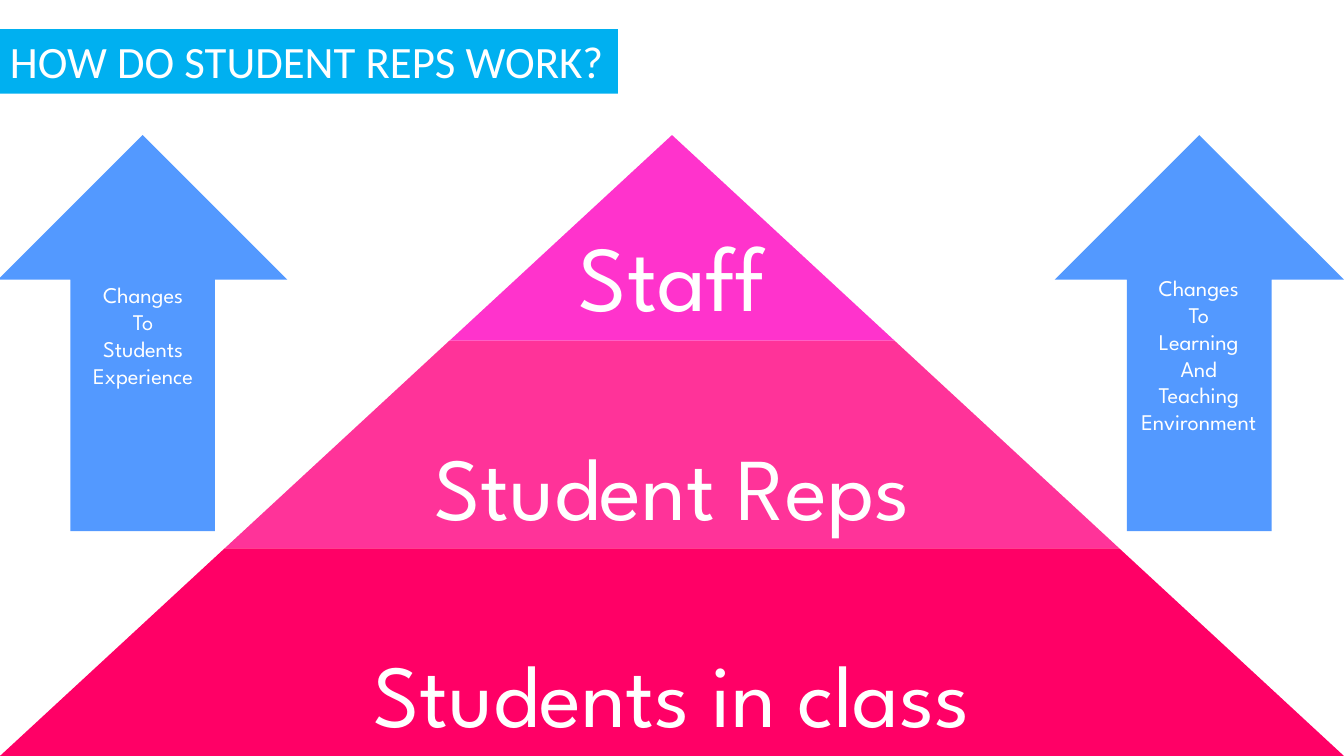
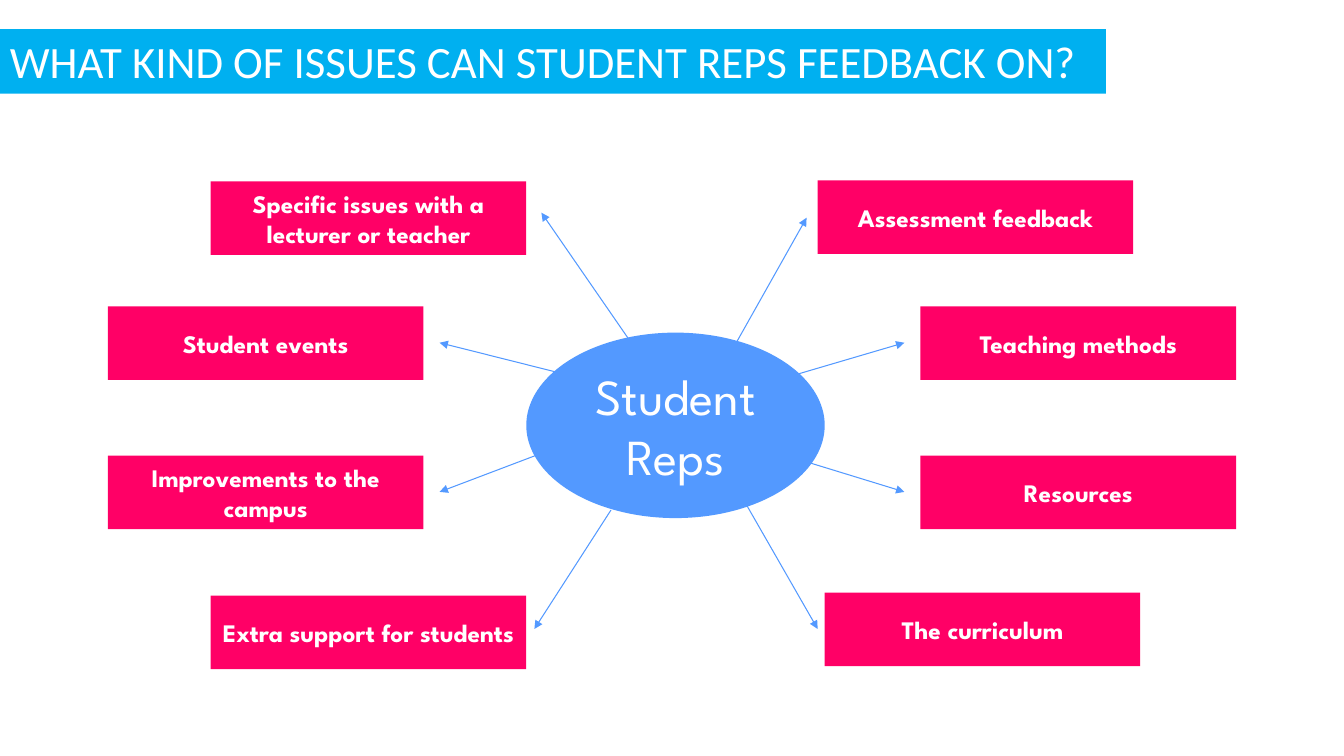
"""Build two slides on how student reps work and what they feed back on."""
from lxml.etree import SubElement
from pptx import Presentation
from pptx.dml.color import RGBColor
from pptx.enum.shapes import MSO_CONNECTOR, MSO_SHAPE
from pptx.enum.text import MSO_ANCHOR, PP_ALIGN
from pptx.oxml.ns import qn
from pptx.util import Inches, Pt

WHITE = RGBColor(0xFF, 0xFF, 0xFF)
BLUE = RGBColor(0x53, 0x99, 0xFF)
CYAN = RGBColor(0x00, 0xB0, 0xF0)
MAGENTA = RGBColor(0xFF, 0x33, 0xCC)
PINK = RGBColor(0xFF, 0x33, 0x99)
RED = RGBColor(0xFF, 0x00, 0x66)

WIDTH, HEIGHT = 13.33, 7.5
BODY_FONT, TITLE_FONT = "League Spartan", "Calibri"
PEAK = 1.34
SLOPE = WIDTH / 2 / (HEIGHT - PEAK)
BOX_W, BOX_H = 3.13, 0.73

TIERS = [
    ("Staff", 3.38, MAGENTA, 66, 1),
    ("Student Reps", 5.44, PINK, 63, 0.65),
    ("Students in class", HEIGHT, RED, 63, 0.65),
]
ARROWS = [
    (-0.02, 0.64, 2.74, 1.45, ["Changes", "To", "Students", "Experience"]),
    (10.46, 11.11, 2.67, 1.99,
     ["Changes", "To", "Learning", "And", "Teaching Environment"]),
]
TOPICS = [
    ("Assessment feedback", 8.11, 1.79, (7.19, 3.6), (8, 2.16)),
    ("Teaching methods", 9.13, 3.04, (7.61, 3.8), (8.97, 3.4)),
    ("Resources", 9.13, 4.52, (7.83, 4.53), (8.97, 4.88)),
    ("The curriculum", 8.18, 5.88, (7.33, 4.88), (8.11, 6.24)),
    ("Extra support for students", 2.09, 5.91, (6.06, 5.06), (5.3, 6.24)),
    ("Improvements to the campus", 1.07, 4.52, (5.6, 4.41), (4.36, 4.88)),
    ("Student events", 1.07, 3.04, (5.71, 3.74), (4.36, 3.4)),
    ("Specific issues with a lecturer or teacher", 2.09, 1.8,
     (6.35, 3.53), (5.37, 2.11)),
]


def write(sp, lines, size, font=BODY_FONT, color=WHITE, bold=False,
          align=PP_ALIGN.CENTER, anchor=MSO_ANCHOR.MIDDLE, spacing=None,
          margin=None):
    """Write one paragraph per line into a shape."""
    tf = sp.text_frame
    tf.word_wrap = True
    tf.vertical_anchor = anchor
    if margin is not None:
        tf.margin_left = tf.margin_right = Inches(margin)
        tf.margin_top = tf.margin_bottom = Inches(margin)
    for i, line in enumerate(lines):
        p = tf.add_paragraph() if i else tf.paragraphs[0]
        p.alignment = align
        if spacing:
            p.line_spacing = spacing
        r = p.add_run()
        r.text = line
        r.font.name = font
        r.font.size = Pt(size)
        r.font.bold = bold
        r.font.color.rgb = color


def add_block(shapes, kind, x, y, w, h, fill):
    """Add a flat filled shape without outline."""
    sp = shapes.add_shape(kind, Inches(x), Inches(y), Inches(w), Inches(h))
    sp.shadow.inherit = False
    sp.fill.solid()
    sp.fill.fore_color.rgb = fill
    sp.line.fill.background()
    return sp


def add_label(shapes, x, y, w, h, lines, size, **fmt):
    """Add a text box."""
    sp = shapes.add_textbox(Inches(x), Inches(y), Inches(w), Inches(h))
    write(sp, lines, size, **fmt)


def add_arrow(shapes, start, end):
    """Add a thin line with an arrowhead at its end."""
    line = shapes.add_connector(MSO_CONNECTOR.STRAIGHT,
                                *(Inches(v) for v in (*start, *end)))
    line.line.color.rgb = BLUE
    line.line.width = Pt(0.75)
    SubElement(line.line._get_or_add_ln(), qn("a:tailEnd"), type="triangle")
    SubElement(line._element.spPr, qn("a:effectLst"))


def add_slide(prs, title, title_w):
    """Add a blank slide with the title band."""
    s = prs.slides.add_slide(prs.slide_layouts[6])
    band = add_block(s.shapes, MSO_SHAPE.RECTANGLE, 0, 0.29, title_w, 0.64, CYAN)
    write(band, [title], 32, font=TITLE_FONT, align=PP_ALIGN.LEFT,
          anchor=MSO_ANCHOR.TOP)
    return s


def add_pyramid(shapes):
    """Stack the tiers from the peak down to the slide's bottom edge."""
    top = PEAK
    for name, bottom, fill, size, text_share in TIERS:
        w, h = 2 * SLOPE * (bottom - PEAK), bottom - top
        sp = add_block(shapes, MSO_SHAPE.TRAPEZOID, (WIDTH - w) / 2, top, w, h, fill)
        sp.adjustments[0] = SLOPE
        text_w = w * text_share
        add_label(shapes, (WIDTH - text_w) / 2, top, text_w, h, [name], size,
                  anchor=MSO_ANCHOR.BOTTOM, spacing=0.9, margin=0.09)
        top = bottom


def build_structure(prs):
    """Build the pyramid slide."""
    s = add_slide(prs, "HOW DO STUDENT REPS WORK?", 6.13)
    add_pyramid(s.shapes.add_group_shape().shapes)
    for x, text_x, text_y, text_h, lines in ARROWS:
        add_block(s.shapes, MSO_SHAPE.UP_ARROW, x, PEAK, 2.87, 3.93, BLUE)
        add_label(s.shapes, text_x, text_y, 1.56, text_h, lines, 16,
                  anchor=MSO_ANCHOR.TOP)


def build_issues(prs):
    """Build the slide with the issues around the hub."""
    s = add_slide(prs, "WHAT KIND OF ISSUES CAN STUDENT REPS FEEDBACK ON?", 10.97)
    hub = add_block(s.shapes, MSO_SHAPE.OVAL, 5.22, 3.3, 2.96, 1.84, BLUE)
    write(hub, ["Student Reps"], 36)
    for name, x, y, start, end in TOPICS:
        box = add_block(s.shapes, MSO_SHAPE.RECTANGLE, x, y, BOX_W, BOX_H, RED)
        write(box, [name], 18, bold=True)
        add_arrow(s.shapes, start, end)


def main():
    """Build and save the deck."""
    prs = Presentation()
    prs.slide_width, prs.slide_height = Inches(WIDTH), Inches(HEIGHT)
    build_structure(prs)
    build_issues(prs)
    prs.save("out.pptx")


if __name__ == "__main__":
    main()
